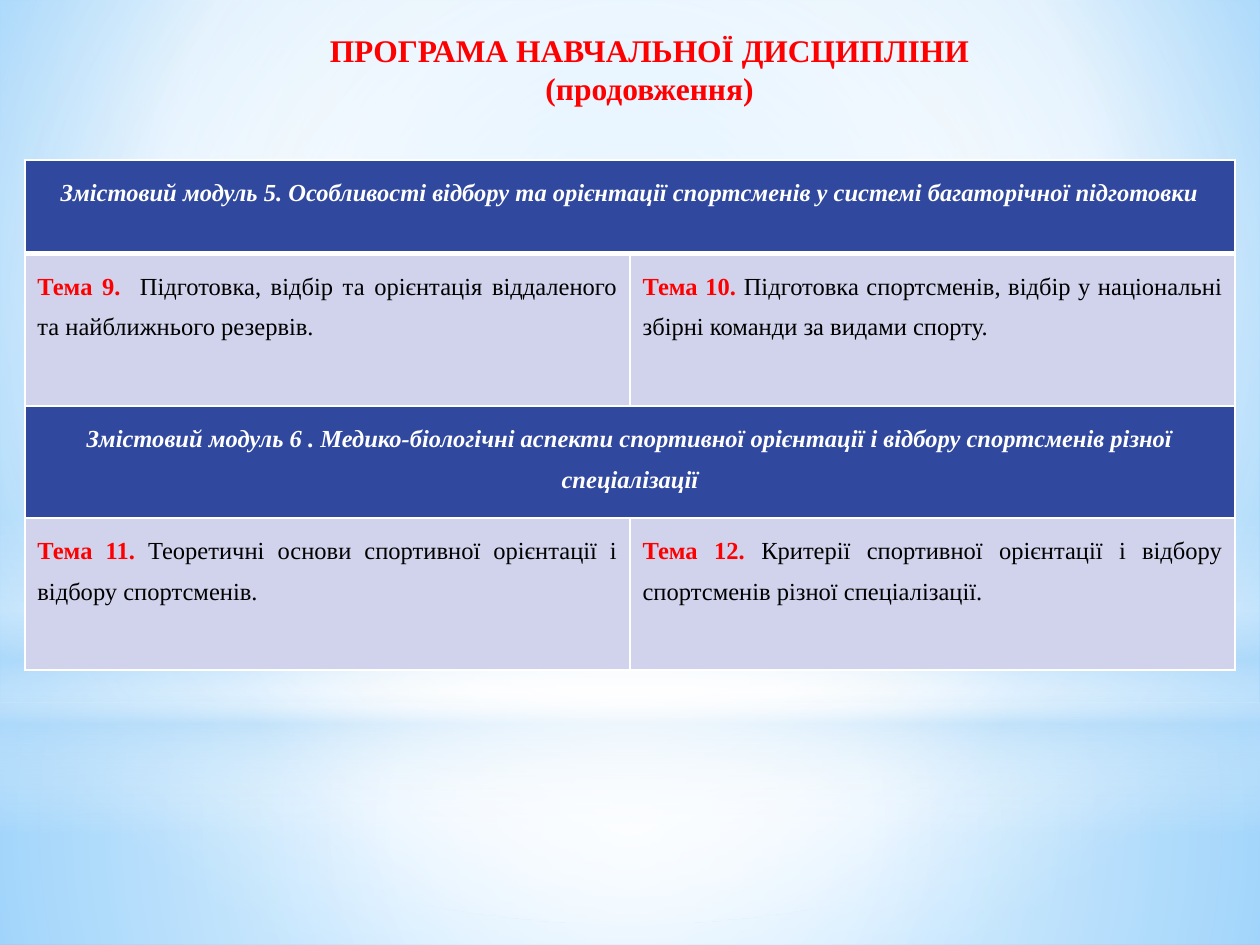
from lxml import etree
from pptx import Presentation
from pptx.dml.color import RGBColor
from pptx.enum.shapes import MSO_SHAPE
from pptx.enum.text import MSO_AUTO_SIZE, PP_ALIGN
from pptx.oxml.ns import qn
from pptx.util import Cm, Pt

RECT, OVAL = MSO_SHAPE.RECTANGLE, MSO_SHAPE.OVAL
CENTER, JUSTIFY = PP_ALIGN.CENTER, PP_ALIGN.JUSTIFY
GROW = MSO_AUTO_SIZE.SHAPE_TO_FIT_TEXT

HUES = {
    "white": "FFFFFF", "black": "000000", "red": "FF0000",
    "navy": "31489F", "lilac": "D0D3EB",
    "mist": "B4DCFA", "sky": "9ED5FF", "azure": "5BB9FF",
}
MID = (50, 50, 50, 50)

# kind, (left, top, width, height) in cm, stops (place, hue, opacity), centre box
VEILS = [
    (RECT, (0, 14.17, 25.4, 4.88),
     [(0, "white", 91), (37, "white", 76), (100, "mist", 79)], MID),
    (RECT, (0, 0, 25.4, 14.17),
     [(0, "white", 89), (48, "white", 62), (100, "mist", 79)], MID),
    (RECT, (0, 10.46, 25.4, 6.35),
     [(0, "white", 0), (29, "white", 30), (45, "mist", 40),
      (55, "white", 26), (65, "mist", 60), (100, "white", 0)], None),
    (OVAL, (0, 4.45, 25.4, 14.17),
     [(0, "white", 100), (56, "white", 0)], MID),
]

# A row with one string is a module heading; otherwise (label, topic) pairs
ROWS = [
    (1.88, ["Змістовий модуль 5. Особливості відбору та орієнтації спортсменів "
            "у системі багаторічної підготовки"]),
    (3.07, [("Тема 9.  ", "Підготовка, відбір та орієнтація віддаленого "
             "та найближнього резервів. "),
            ("Тема 10. ", "Підготовка спортсменів, відбір у національні "
             "збірні команди за видами спорту. ")]),
    (2.26, ["Змістовий модуль 6 . Медико-біологічні аспекти спортивної "
            "орієнтації і відбору спортсменів різної спеціалізації"]),
    (3.07, [("Тема 11. ", "Теоретичні основи спортивної орієнтації "
             "і відбору спортсменів."),
            ("Тема 12. ", "Критерії спортивної орієнтації і відбору "
             "спортсменів різної спеціалізації.")]),
]


def put(par, text, size=14, hue="black", bold=False, italic=False):
    run = par.add_run()
    run.text = text
    font = run.font
    font.name, font.size = "Times New Roman", Pt(size)
    font.bold, font.italic = bold, italic
    font.color.rgb = RGBColor.from_string(HUES[hue])


def blend(fill, root, stops, box):
    """Give the first gradient under root these stops: radial about box, or downward."""
    fill.gradient()
    grad = root.find(".//" + qn("a:gradFill"))
    for child in list(grad):
        grad.remove(child)
    group = etree.SubElement(grad, qn("a:gsLst"))
    for place, hue, alpha in stops:
        stop = etree.SubElement(group, qn("a:gs"), pos=str(place * 1000))
        tone = etree.SubElement(stop, qn("a:srgbClr"), val=HUES[hue])
        if alpha < 100:
            etree.SubElement(tone, qn("a:alpha"), val=str(alpha * 1000))
    if box:
        way = etree.SubElement(grad, qn("a:path"), path="circle")
        sides = {side: str(part * 1000) for side, part in zip("ltrb", box)}
        etree.SubElement(way, qn("a:fillToRect"), **sides)
    else:
        etree.SubElement(grad, qn("a:lin"), ang="5400000", scaled="0")


def edge(cell, **widths):
    """Draw white cell borders; widths in points override 1 by side L, R, T, B."""
    props = cell._tc.get_or_add_tcPr()
    for spot, side in enumerate("LRTB"):
        width = Pt(widths.get(side, 1))
        line = etree.Element(qn("a:ln" + side), w=str(width))
        paint = etree.SubElement(line, qn("a:solidFill"))
        etree.SubElement(paint, qn("a:srgbClr"), val=HUES["white"])
        props.insert(spot, line)


class Deck:
    def __init__(self):
        self.show = Presentation()
        self.show.slide_width, self.show.slide_height = Cm(25.4), Cm(19.05)
        self.slide = self.show.slides.add_slide(self.show.slide_layouts[6])

    def ground(self, stops, box):
        blend(self.slide.background.fill, self.slide.element, stops, box)

    def veil(self, kind, place, stops, box):
        shape = self.slide.shapes.add_shape(kind, *map(Cm, place))
        shape.shadow.inherit = False
        shape.line.fill.background()
        blend(shape.fill, shape.element, stops, box)

    def title(self, place, lines):
        frame = self.slide.shapes.add_textbox(*map(Cm, place)).text_frame
        frame.word_wrap, frame.auto_size = True, GROW
        for num, text in enumerate(lines):
            par = frame.add_paragraph() if num else frame.paragraphs[0]
            par.alignment = CENTER
            put(par, text, size=18, hue="red", bold=True)

    def table(self, left, top, width, rows):
        high = sum(tall for tall, _ in rows)
        grid = self.slide.shapes.add_table(
            len(rows), 2, Cm(left), Cm(top), Cm(width), Cm(high)).table
        grid.horz_banding = False
        for num, (tall, items) in enumerate(rows):
            grid.rows[num].height = Cm(tall)
            head = len(items) == 1
            cells = [grid.cell(num, col) for col in range(2)]
            if head:
                cells[0].merge(cells[1])
            for cell in cells:
                edge(cell, **{0: {"B": 3}, 1: {"T": 3}}.get(num, {}))
                cell.fill.solid()
                cell.fill.fore_color.rgb = RGBColor.from_string(
                    HUES["navy" if head else "lilac"])
            for cell, item in zip(cells, items):
                par = cell.text_frame.paragraphs[0]
                par.line_spacing = 1.5
                par.alignment = CENTER if head else JUSTIFY
                if head:
                    put(par, item, hue="white", bold=True, italic=True)
                else:
                    label, topic = item
                    put(par, label, hue="red", bold=True)
                    put(par, topic)


def main():
    deck = Deck()
    deck.ground([(0, "sky", 100), (60, "white", 100), (100, "azure", 100)],
                (20, 10, 20, 60))
    for veil in VEILS:
        deck.veil(*veil)
    deck.title((4.7, 0.51, 16.79, 1.8),
               ["ПРОГРАМА НАВЧАЛЬНОЇ ДИСЦИПЛІНИ", "(продовження)"])
    deck.table(0.5, 3.23, 24.4, ROWS)
    deck.show.save("out.pptx")


if __name__ == "__main__":
    main()
